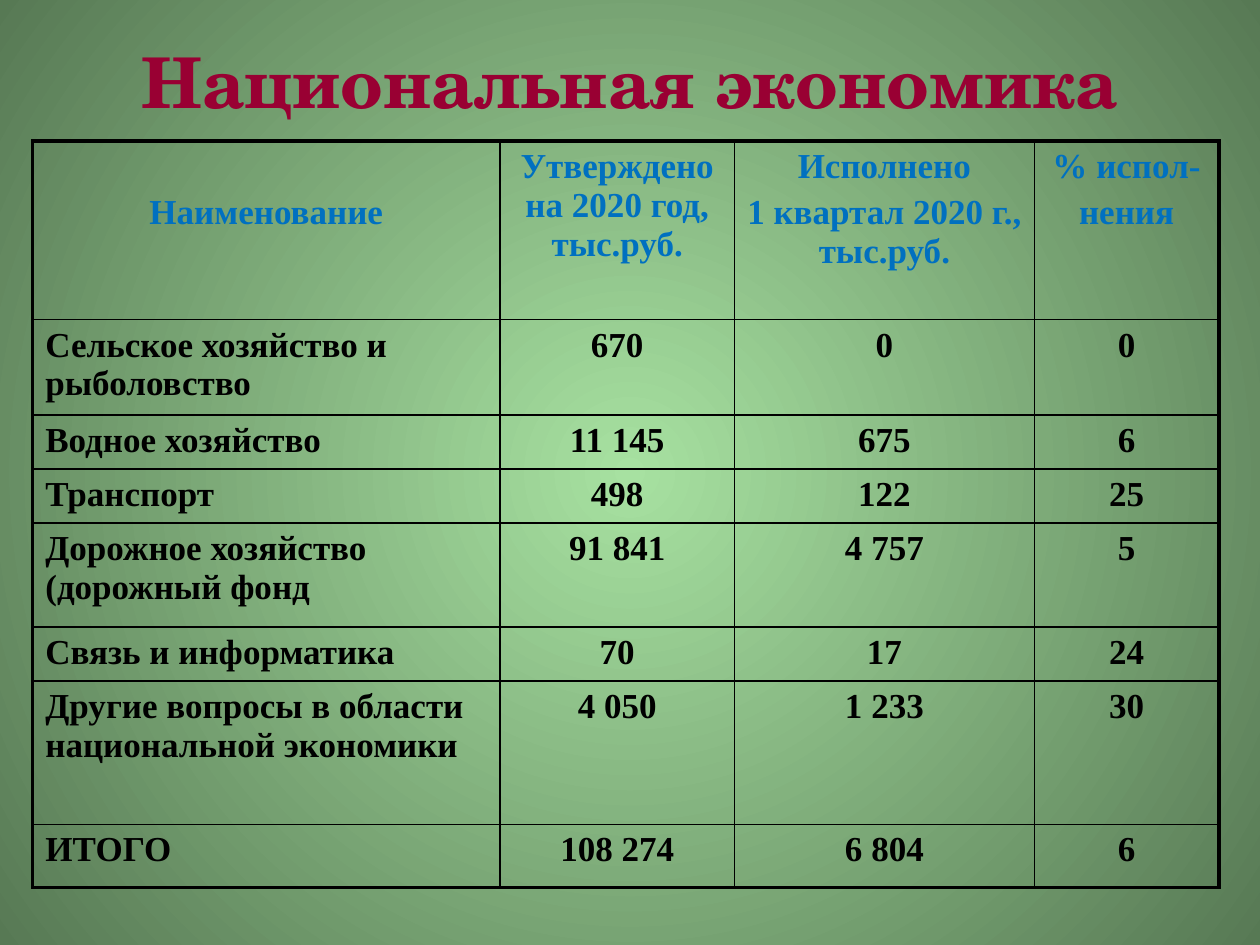
from lxml.etree import SubElement
from pptx import Presentation
from pptx.dml.color import RGBColor
from pptx.enum.text import MSO_ANCHOR, PP_ALIGN
from pptx.oxml.ns import qn
from pptx.util import Pt

# Content
TITLE = "Национальная экономика"
HEADERS = [
    ["Наименование"],
    ["Утверждено на 2020 год, тыс.руб."],
    ["Исполнено", "1 квартал 2020 г., тыс.руб."],
    ["% испол-", "нения"],
]
BUDGET = [
    ("Сельское хозяйство и рыболовство", "670", "0", "0"),
    ("Водное хозяйство", "11 145", "675", "6"),
    ("Транспорт", "498", "122", "25"),
    ("Дорожное хозяйство (дорожный фонд", "91 841", "4 757", "5"),
    ("Связь и информатика", "70", "17", "24"),
    ("Другие вопросы в области национальной экономики", "4 050", "1 233", "30"),
    ("ИТОГО", "108 274", "6 804", "6"),
]

# Layout and style, in points
TABLE_LEFT, TABLE_TOP = 18.7, 80.6
COLUMN_WIDTHS = [267, 134, 171.4, 105.4]
ROW_HEIGHTS = [102, 54.6, 30.9, 30.9, 59.2, 30.9, 82, 36]
OUTER_LINE, INNER_LINE = 2.25, 1
BLACK, BLUE, CRIMSON = "000000", "0070C0", "990033"
GRADIENT = ["A7E1A1", "577954"]


def color(value):
    return RGBColor.from_string(value)


def write_text(frame, lines, font="Times New Roman", size=20, fill=BLACK,
               align=PP_ALIGN.CENTER, gap=4):
    frame.word_wrap = True
    for index, line in enumerate(lines):
        paragraph = frame.paragraphs[0] if index == 0 else frame.add_paragraph()
        paragraph.alignment = align
        paragraph.space_before = Pt(gap if index else 0)
        run = paragraph.add_run()
        run.text = line
        run.font.name = font
        run.font.size = Pt(size)
        run.font.bold = True
        run.font.color.rgb = color(fill)


def set_borders(cell, widths):
    properties = cell._tc.get_or_add_tcPr()
    for position, (side, width) in enumerate(widths.items()):
        line = properties.makeelement(qn(f"a:ln{side}"), {"w": str(Pt(width))})
        fill = SubElement(line, qn("a:solidFill"))
        SubElement(fill, qn("a:srgbClr"), val=BLACK)
        properties.insert(position, line)


def set_background(slide):
    fill = slide.background.fill
    fill.gradient()
    for stop, value in zip(fill.gradient_stops, GRADIENT):
        stop.color.rgb = color(value)
    gradient = slide._element.find(".//" + qn("a:gradFill"))
    gradient.remove(gradient.find(qn("a:lin")))
    circle = SubElement(gradient, qn("a:path"), path="circle")
    SubElement(circle, qn("a:fillToRect"), l="50000", t="50000", r="50000", b="50000")


def add_title(slide):
    title = slide.shapes.title
    title.left, title.top, title.width, title.height = Pt(0), Pt(23), Pt(720), Pt(46)
    title.text_frame.vertical_anchor = MSO_ANCHOR.MIDDLE
    write_text(title.text_frame, [TITLE], font="TeX Gyre Schola", size=40, fill=CRIMSON)


def add_budget_table(slide):
    rows = [HEADERS] + [[[text] for text in row] for row in BUDGET]
    last_row, last_column = len(rows) - 1, len(HEADERS) - 1
    table = slide.shapes.add_table(
        len(rows), len(HEADERS), Pt(TABLE_LEFT), Pt(TABLE_TOP),
        Pt(sum(COLUMN_WIDTHS)), Pt(sum(ROW_HEIGHTS))).table
    table.first_row = table.horz_banding = False
    for column, width in zip(table.columns, COLUMN_WIDTHS):
        column.width = Pt(width)
    for row, height in zip(table.rows, ROW_HEIGHTS):
        row.height = Pt(height)

    for r, row in enumerate(rows):
        for c, lines in enumerate(row):
            cell = table.cell(r, c)
            cell.fill.background()
            is_label = r > 0 and c == 0
            write_text(cell.text_frame, lines, fill=BLACK if r else BLUE,
                       align=PP_ALIGN.LEFT if is_label else PP_ALIGN.CENTER)
            edges = {"L": c == 0, "R": c == last_column, "T": r == 0, "B": r == last_row}
            set_borders(cell, {side: OUTER_LINE if outer else INNER_LINE
                               for side, outer in edges.items()})
    # The first heading sits one line lower than the others
    table.cell(0, 0).margin_top = Pt(30)


def main():
    presentation = Presentation()
    presentation.slide_width, presentation.slide_height = Pt(720), Pt(540)
    slide = presentation.slides.add_slide(presentation.slide_layouts[5])
    set_background(slide)
    add_title(slide)
    add_budget_table(slide)
    presentation.save("out.pptx")


if __name__ == "__main__":
    main()
